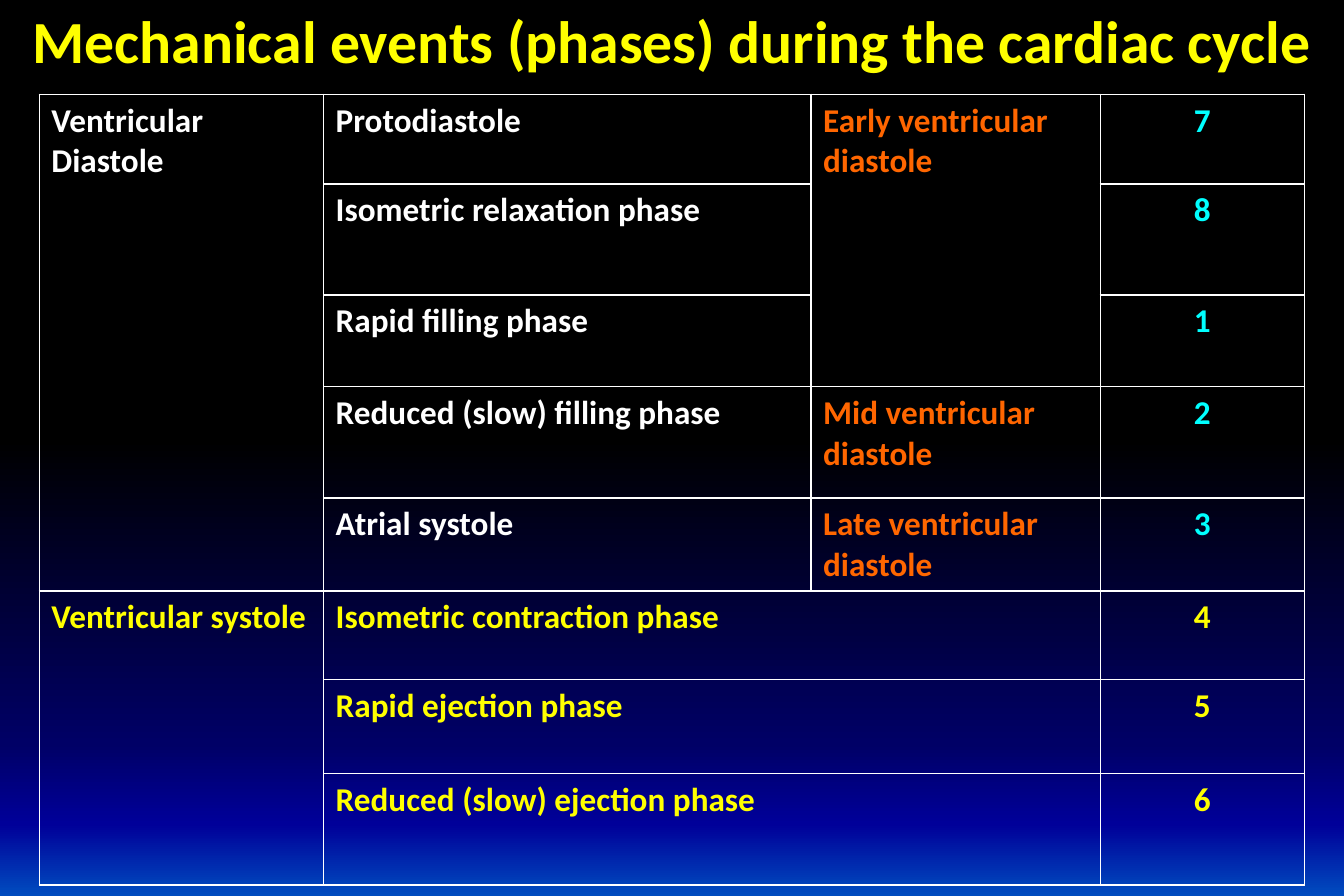
from pptx import Presentation
from pptx.dml.color import RGBColor
from pptx.enum import text
from pptx.oxml import parse_xml
from pptx.oxml.ns import nsdecls, qn
from pptx.util import Inches, Pt

WHITE, YELLOW, ORANGE, CYAN = "FFFFFF", "FFFF00", "FF6600", "00FFFF"
BACKDROP = [(49, "000000"), (83, "000066"), (92, "000099"), (100, "004CBF")]

COLUMN_WIDTHS = [2.38, 4.08, 2.42, 1.71]
ROW_HEIGHTS = [0.75, 0.93, 0.75, 0.93, 0.78, 0.74, 0.79, 0.93]
# Period of the cycle, phase, part of diastole, number
PHASES = [
    ("Ventricular Diastole", "Protodiastole", "Early ventricular diastole", "7"),
    ("", "Isometric relaxation phase", "", "8"),
    ("", "Rapid filling phase", "", "1"),
    ("", "Reduced (slow) filling phase", "Mid ventricular diastole", "2"),
    ("", "Atrial systole", "Late ventricular diastole", "3"),
    ("Ventricular systole", "Isometric contraction phase", "", "4"),
    ("", "Rapid ejection phase", "", "5"),
    ("", "Reduced (slow) ejection phase", "", "6"),
]
DIASTOLE_ROWS = 5
DIASTOLE_COLORS = [WHITE, WHITE, ORANGE, CYAN]
# First and last cell of each merged block
MERGES = [((0, 0), (4, 0)), ((0, 2), (2, 2)), ((5, 0), (7, 0))]
MERGES += [((row, 1), (row, 2)) for row in range(DIASTOLE_ROWS, len(PHASES))]


def rgb(color):
    return RGBColor.from_string(color)


def write(frame, words, size, color, align):
    frame.text = words
    paragraph = frame.paragraphs[0]
    paragraph.alignment = align
    for run in paragraph.runs:
        run.font.name = "Calibri"
        run.font.size = Pt(size)
        run.font.bold = True
        run.font.color.rgb = rgb(color)


def paint_background(slide):
    slide.background.fill.gradient()
    gradient = slide.background._cSld.find(".//" + qn("a:gradFill"))
    stops = "".join(f'<a:gs pos="{percent * 1000}"><a:srgbClr val="{color}"/></a:gs>'
                    for percent, color in BACKDROP)
    gradient.replace(gradient.find(qn("a:gsLst")),
                     parse_xml(f'<a:gsLst {nsdecls("a")}>{stops}</a:gsLst>'))
    gradient.find(qn("a:lin")).set("ang", str(90 * 60000))


def add_title(slide, left, top, width, height):
    title = slide.shapes.add_textbox(Inches(left), Inches(top), Inches(width), Inches(height))
    frame = title.text_frame
    frame.word_wrap = True
    frame.vertical_anchor = text.MSO_ANCHOR.MIDDLE
    write(frame, "Mechanical events (phases) during the cardiac cycle", 36, YELLOW,
          text.PP_ALIGN.CENTER)


def outline_cell(cell, color, points):
    properties = cell._tc.get_or_add_tcPr()
    for position, side in enumerate(["lnL", "lnR", "lnT", "lnB"]):
        properties.insert(position, parse_xml(
            f'<a:{side} {nsdecls("a")} w="{Pt(points)}"><a:solidFill>'
            f'<a:srgbClr val="{color}"/></a:solidFill></a:{side}>'))


def add_phase_table(slide, left, top, width, height):
    table = slide.shapes.add_table(len(PHASES), len(COLUMN_WIDTHS), Inches(left), Inches(top),
                                   Inches(width), Inches(height)).table
    table.first_row = table.horz_banding = False
    for column, column_width in zip(table.columns, COLUMN_WIDTHS):
        column.width = Inches(column_width)
    for row, row_height in zip(table.rows, ROW_HEIGHTS):
        row.height = Inches(row_height)

    # Cell text, fill and borders
    for r, phase in enumerate(PHASES):
        for c, words in enumerate(phase):
            cell = table.cell(r, c)
            color = DIASTOLE_COLORS[c] if r < DIASTOLE_ROWS else YELLOW
            align = text.PP_ALIGN.CENTER if c == 3 else text.PP_ALIGN.LEFT
            write(cell.text_frame, words, 20, color, align)
            cell.fill.background()
            outline_cell(cell, WHITE, 1)

    for first, last in MERGES:
        table.cell(*first).merge(table.cell(*last))


def main():
    deck = Presentation()
    deck.slide_width, deck.slide_height = Inches(11.25), Inches(7.5)
    slide = deck.slides.add_slide(deck.slide_layouts[6])
    paint_background(slide)
    add_title(slide, 0, 0, 11.25, 0.67)
    add_phase_table(slide, 0.33, 0.79, 10.58, 6.63)
    deck.save("out.pptx")


if __name__ == "__main__":
    main()
